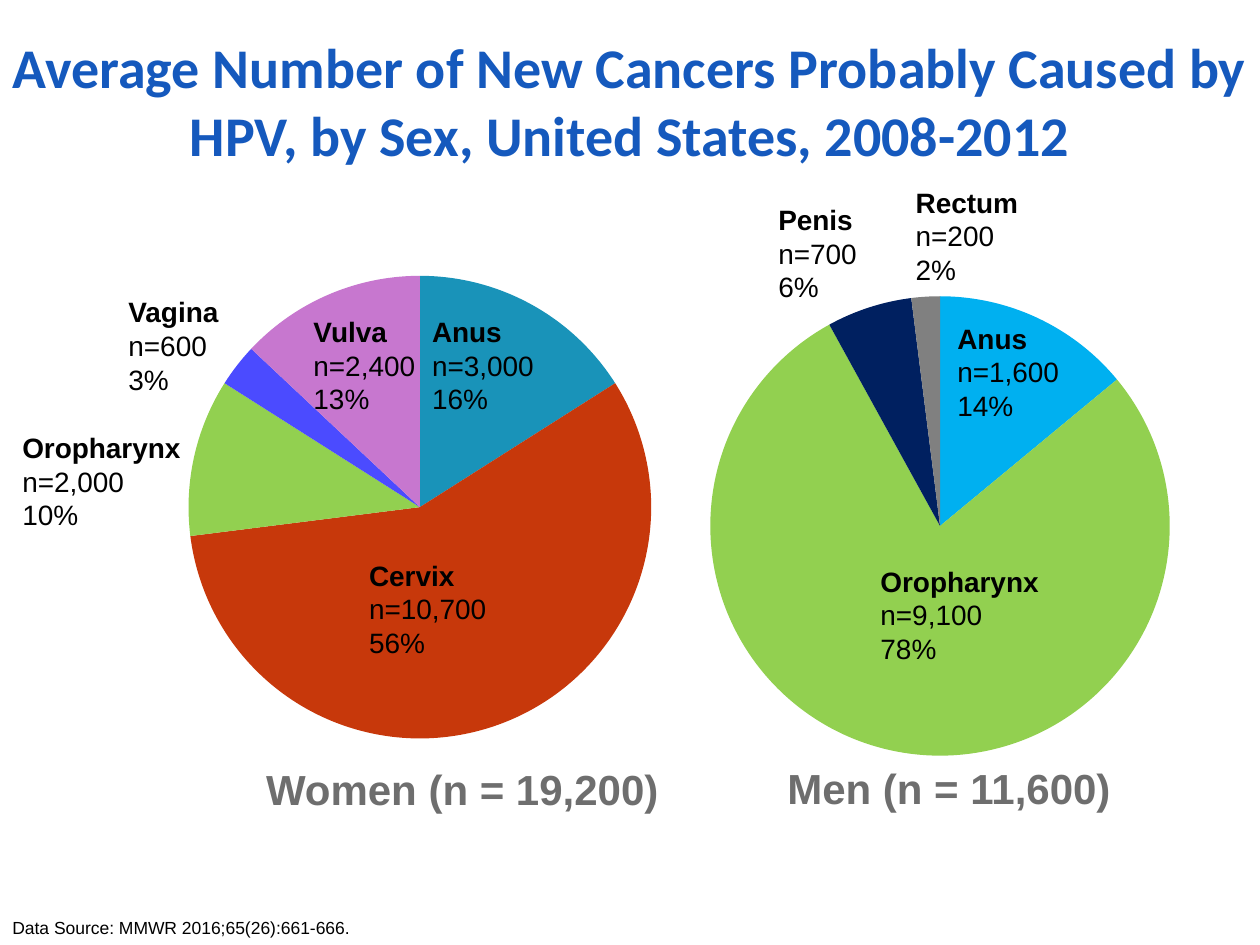
from dataclasses import dataclass

from lxml import etree
from pptx import Presentation
from pptx import util as u
from pptx.chart import data as cd
from pptx.dml.color import RGBColor
from pptx.enum import chart as ch, text as tx
from pptx.oxml import ns


@dataclass(frozen=True)
class Theme:
    head: str = "Calibri"
    body: str = "Arial"
    blue: str = "1559BD"
    grey: str = "6E6E6E"
    ink: str = "000000"
    title: int = 32
    total: int = 24
    label: int = 16
    note: int = 10
    women: tuple = ("1993B9", "C7380B", "92D050", "4B4BFF", "C777CF")
    men: tuple = ("00B0F0", "92D050", "002060", "808080")


T = Theme()
LABEL = (4.1, 2.31)  # width and height of a slice label
FILL = 0.93          # pie diameter as a share of chart width

# Slice labels: left, top, name, count, share
WOMEN = [
    (8.46, 6.22, "Anus", "3,000", 16),
    (7.19, 11.13, "Cervix", "10,700", 56),
    (0.2, 8.56, "Oropharynx", "2,000", 10),
    (2.34, 5.82, "Vagina", "600", 3),
    (6.07, 6.22, "Vulva", "2,400", 13),
]
MEN = [
    (19.05, 6.35, "Anus", "1,600", 14),
    (17.5, 11.25, "Oropharynx", "9,100", 78),
    (15.44, 3.96, "Penis", "700", 6),
    (18.21, 3.61, "Rectum", "200", 2),
]


def put_text(slide, box, runs, *, size, color=T.ink, font=T.body, bold=False,
             align=tx.PP_ALIGN.LEFT, anchor=tx.MSO_ANCHOR.TOP, side=0.25, after=0):
    """Add one paragraph; runs is a string or a list of (string, bold)."""
    frame = slide.shapes.add_textbox(*map(u.Cm, box)).text_frame
    frame.word_wrap = True
    frame.vertical_anchor = anchor
    frame.margin_left = frame.margin_right = u.Cm(side)
    para = frame.paragraphs[0]
    para.alignment = align
    para.space_after = u.Pt(after)
    if isinstance(runs, str):
        runs = [(runs, bold)]
    for row, (words, heavy) in enumerate(runs):
        if row:
            para.add_line_break()
        run = para.add_run()
        run.text = words
        run.font.name, run.font.size, run.font.bold = font, u.Pt(size), heavy
        run.font.color.rgb = RGBColor.from_string(color)


def set_plot(chart, wide, high):
    """Centre a round plot area in the chart frame."""
    plot = chart._chartSpace.find(".//" + ns.qn("c:plotArea"))
    for old in plot.findall(ns.qn("c:layout")):
        plot.remove(old)
    outer = etree.Element(ns.qn("c:layout"))
    inner = etree.SubElement(outer, ns.qn("c:manualLayout"))
    w, h = FILL, FILL * wide / high
    parts = {"layoutTarget": "inner", "xMode": "edge", "yMode": "edge",
             "x": (1 - w) / 2, "y": (1 - h) / 2, "w": w, "h": h}
    for tag, val in parts.items():
        etree.SubElement(inner, ns.qn("c:" + tag)).set("val", str(val))
    plot.insert(0, outer)


def add_pie(slide, box, vals, colors):
    data = cd.CategoryChartData()
    data.categories = [str(n) for n in range(1, len(vals) + 1)]
    data.add_series("Series 1", vals)
    chart = slide.shapes.add_chart(ch.XL_CHART_TYPE.PIE, *map(u.Cm, box), data).chart
    chart.has_legend = chart.has_title = False
    chart.font.name, chart.font.size = T.head, u.Pt(18)
    chart.font.color.rgb = RGBColor.from_string(T.ink)
    chart.plots[0].vary_by_categories = True
    for n, color in enumerate(colors):
        form = chart.plots[0].series[0].points[n].format
        form.fill.solid()
        form.fill.fore_color.rgb = RGBColor.from_string(color)
        form.line.fill.background()
    set_plot(chart, *box[2:])


def add_group(slide, box, vals, colors, labels, total, spot):
    """Add a pie with its slice labels and the total below it."""
    add_pie(slide, box, vals, colors)
    put_text(slide, spot, total, size=T.total, color=T.grey, bold=True,
             align=tx.PP_ALIGN.CENTER)
    for left, top, name, count, share in labels:
        runs = [(name, True), (f"n={count}", False), (f"{share}%", False)]
        put_text(slide, (left, top, *LABEL), runs, size=T.label)


def main():
    deck = Presentation()
    deck.slide_width, deck.slide_height = u.Cm(25.4), u.Cm(19.05)
    slide = deck.slides.add_slide(deck.slide_layouts[6])

    # Title
    put_text(slide, (0, 0.43, 25.4, 3.18),
             "Average Number of New Cancers Probably Caused by HPV, by Sex, "
             "United States, 2008-2012",
             size=T.title, color=T.blue, font=T.head, bold=True, side=0.1,
             align=tx.PP_ALIGN.CENTER, anchor=tx.MSO_ANCHOR.MIDDLE)

    # Pies
    add_group(slide, (3.45, 3.48, 10.03, 13.49), (16, 57, 11, 3, 13), T.women,
              WOMEN, "Women (n = 19,200)", (4.75, 15.27, 9.14, 1.27))
    add_group(slide, (13.97, 4.7, 9.96, 11.81), (14, 78, 6, 2), T.men,
              MEN, "Men (n = 11,600)", (15.04, 15.24, 8.18, 1.27))

    # Source
    put_text(slide, (0, 18.36, 15.04, 0.69), "Data Source: MMWR 2016;65(26):661-666.",
             size=T.note, after=6)
    deck.save("out.pptx")


if __name__ == "__main__":
    main()
